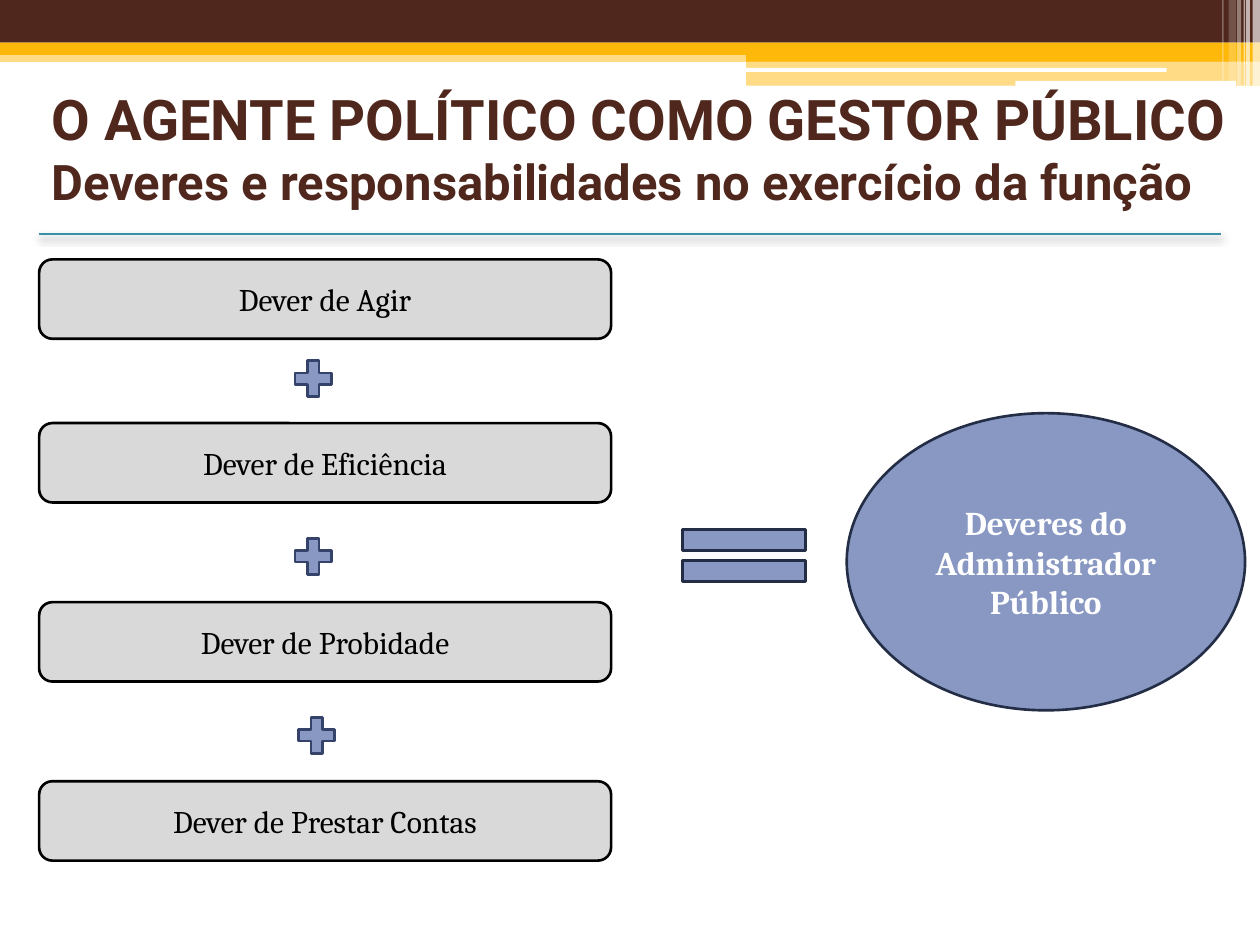
from lxml import etree
from pptx import Presentation
from pptx.dml.color import RGBColor
from pptx.enum.shapes import MSO_CONNECTOR, MSO_SHAPE
from pptx.enum.text import MSO_ANCHOR, PP_ALIGN
from pptx.oxml import parse_xml
from pptx.oxml.ns import nsdecls, qn
from pptx.util import Cm, Pt

RECT, ROUND = MSO_SHAPE.RECTANGLE, MSO_SHAPE.ROUNDED_RECTANGLE
BOX, ELLIPSE = MSO_SHAPE.FLOWCHART_ALTERNATE_PROCESS, MSO_SHAPE.OVAL
PLUS, EQUAL = MSO_SHAPE.MATH_PLUS, MSO_SHAPE.MATH_EQUAL
STRAIGHT = MSO_CONNECTOR.STRAIGHT
MIDDLE = MSO_ANCHOR.MIDDLE
LEFT, CENTER = PP_ALIGN.LEFT, PP_ALIGN.CENTER

COLORS = {
    "brown": "4F271C", "gold": "FEB80A", "white": "FFFFFF", "black": "000000",
    "gray": "D9D9D9", "blue": "8898C3", "plus_edge": "35436A",
    "dark_edge": "242D46", "teal": "3891A7",
}
WIDTH, HEIGHT = 25.4, 19.05
MARGIN = 0.79

# left, top, width, height, colour, opacity in percent
BANDS = [
    (0, 1.02, WIDTH, 0.23, "gold", 50),
    (0, 0, WIDTH, 0.86, "brown", 100),
    (0, 0.86, WIDTH, 0.25, "gold", 100),
    (15.04, 0.99, 10.36, 0.25, "gold", 100),
    (15.04, 1.22, 10.36, 0.51, "gold", 50),
]
WHITE_BARS = [(15.01, 1.37, 8.51, 0.08), (20.47, 1.63, 4.45, 0.1)]
# left, width, height, opacity in percent
STRIPES = [
    (25.25, 0.15, 1.73, 65), (25.12, 0.08, 1.73, 65), (25.07, 0.03, 1.73, 60),
    (24.94, 0.08, 1.73, 40), (24.77, 0.15, 1.63, 20), (24.64, 0.03, 1.63, 30),
]
DUTIES = [
    ("Dever de Agir", 5.23),
    ("Dever de Eficiência", 8.53),
    ("Dever de Probidade", 12.14),
    ("Dever de Prestar Contas", 15.75),
]
PLUSES = [(5.82, 7.14), (5.82, 10.72), (5.89, 14.33)]


def rgb(name):
    return RGBColor.from_string(COLORS[name])


class SlideBuilder:
    """Draws on one slide; lengths in cm, text sizes in points."""

    line_width = Pt(1.5)

    def __init__(self, slide):
        self.slide = slide

    def shape(self, kind, box, fill, line=None, opacity=100):
        s = self.slide.shapes.add_shape(kind, *map(Cm, box))
        s.shadow.inherit = False
        s.fill.solid()
        s.fill.fore_color.rgb = rgb(fill)
        if opacity < 100:
            color = s._element.spPr.find(qn("a:solidFill"))[0]
            etree.SubElement(color, qn("a:alpha"), val=str(opacity * 1000))
        if line:
            s.line.color.rgb = rgb(line)
            s.line.width = self.line_width
        else:
            s.line.fill.background()
        return s

    def label(self, s, text, font, sizes, color, bold=False, align=CENTER):
        """Fill a shape with one paragraph, giving each line its own size."""
        tf = s.text_frame
        tf.word_wrap = True
        tf.vertical_anchor = MIDDLE
        p = tf.paragraphs[0]
        p.text = text
        p.alignment = align
        for r, size in zip(p.runs, sizes):
            r.font.name = font
            r.font.size = Pt(size)
            r.font.bold = bold
            r.font.color.rgb = rgb(color)

    def title(self, box, text, sizes):
        s = self.slide.shapes.add_textbox(*map(Cm, box))
        self.label(s, text, "Roboto", sizes, "brown", bold=True, align=LEFT)

    def rule(self, left, right, y, color):
        """Horizontal line with a soft shadow below it."""
        s = self.slide.shapes.add_connector(STRAIGHT, Cm(left), Cm(y), Cm(right), Cm(y))
        s.line.color.rgb = rgb(color)
        s.line.width = self.line_width
        s._element.spPr.append(parse_xml(
            f'<a:effectLst {nsdecls("a")}>'
            f'<a:outerShdw blurRad="{Pt(4.1)}" dist="{Pt(2)}" dir="5400000" rotWithShape="0">'
            f'<a:srgbClr val="{COLORS["black"]}"><a:alpha val="40000"/></a:srgbClr>'
            '</a:outerShdw></a:effectLst>'))


def main():
    prs = Presentation()
    prs.slide_width, prs.slide_height = Cm(WIDTH), Cm(HEIGHT)
    b = SlideBuilder(prs.slides.add_slide(prs.slide_layouts[6]))

    for *box, color, opacity in BANDS:
        b.shape(RECT, box, color, opacity=opacity)
    for box in WHITE_BARS:
        b.shape(ROUND, box, "white")
    for left, width, height, opacity in STRIPES:
        b.shape(RECT, (left, 0, width, height), "white", opacity=opacity)

    b.title((MARGIN, 1.32, WIDTH - MARGIN, 3.3),
            "O AGENTE POLÍTICO COMO GESTOR PÚBLICO\v"
            "Deveres e responsabilidades no exercício da função", (32, 28))
    b.rule(MARGIN, WIDTH - MARGIN, 4.72, "teal")

    for text, top in DUTIES:
        s = b.shape(BOX, (MARGIN, top, 11.53, 1.6), "gray", "black")
        b.label(s, text, "Cambria", [18], "black")
    for left, top in PLUSES:
        b.shape(PLUS, (left, top, 0.99, 0.99), "blue", "plus_edge")

    b.shape(EQUAL, (13.31, 10.31, 3.38, 1.78), "blue", "dark_edge")
    s = b.shape(ELLIPSE, (17.07, 8.33, 8.03, 5.99), "blue", "dark_edge")
    b.label(s, "Deveres do Administrador Público", "Cambria", [19], "white", bold=True)

    prs.save("out.pptx")


if __name__ == "__main__":
    main()
